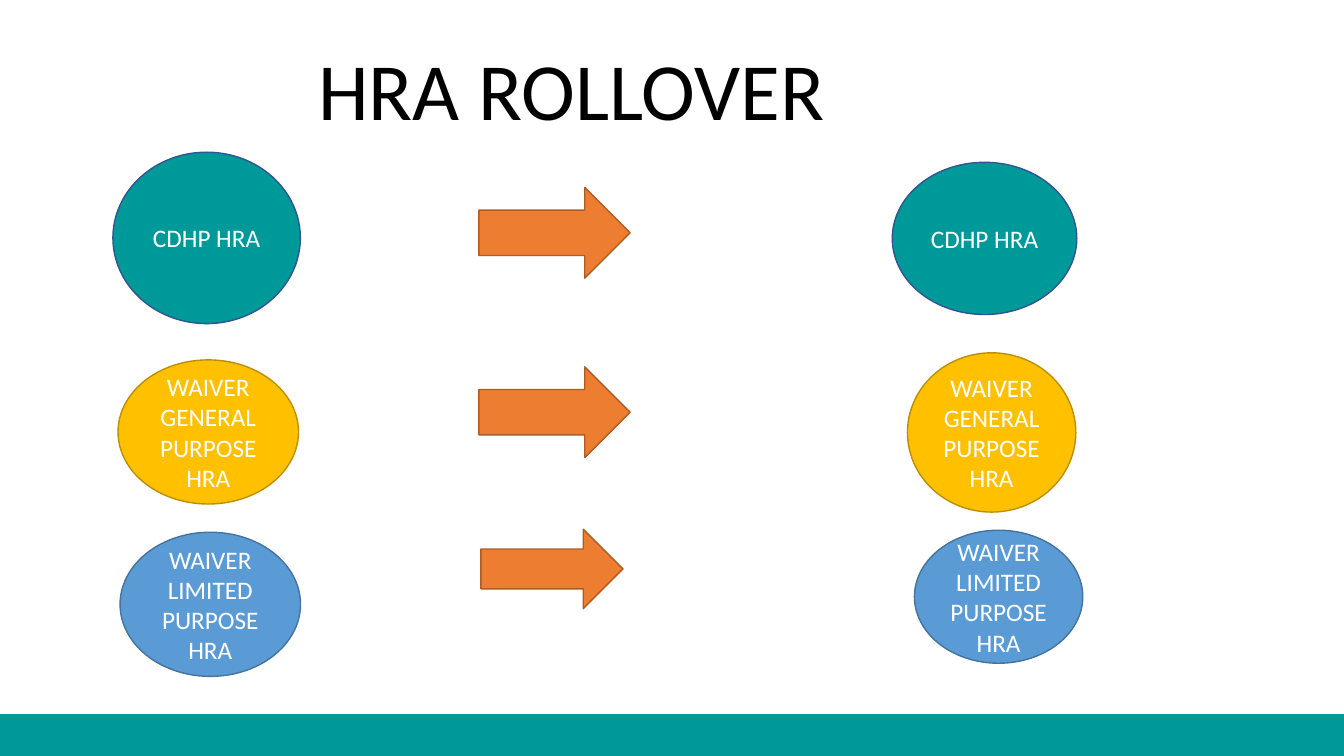
from pptx import Presentation
from pptx.dml.color import RGBColor as RGB
from pptx.enum.shapes import MSO_SHAPE as SHAPE
from pptx.enum.text import MSO_ANCHOR as ANCHOR, PP_ALIGN as ALIGN
from pptx.oxml import parse_xml
from pptx.oxml.ns import nsdecls
from pptx.util import Inches, Pt

THEME = {
    "font": "Calibri", "title": 58, "label": 18, "edge": 1,
    "black": "000000", "white": "FFFFFF", "band": "009999",
    "teal": ("009999", "325491"),
    "gold": ("FFC000", "BD8E00"),
    "blue": ("5B9BD5", "43739E"),
    "arrow": ("ED7D31", "AF5C24"),
}

deck = Presentation()
deck.slide_width, deck.slide_height = Inches(13.33), Inches(7.5)
slide = deck.slides.add_slide(deck.slide_layouts[6])


def place(x, y, w, h):
    """Turn percentages of the slide into a box."""
    wide, high = deck.slide_width / 100, deck.slide_height / 100
    return [round(n) for n in (x * wide, y * high, w * wide, h * high)]


def write(frame, text, size, color):
    """Put one centred run into a frame."""
    frame.word_wrap = True
    para = frame.paragraphs[0]
    para.alignment = ALIGN.CENTER
    run = para.add_run()
    run.text = text
    run.font.name = THEME["font"]
    run.font.size = Pt(THEME[size])
    run.font.color.rgb = RGB.from_string(THEME[color])


# Title
title = slide.shapes.add_textbox(*place(0.75, 4.53, 83.5, 14.4))
write(title.text_frame, "HRA ROLLOVER", "title", "black")

# Footer band: a one-cell table with borders in its own colour
band = slide.shapes.add_table(1, 1, *place(0, 94.53, 100, 5.33)).table
cell = band.cell(0, 0)
for side in ("lnL", "lnR", "lnT", "lnB"):
    cell._tc.get_or_add_tcPr().append(parse_xml(
        f'<a:{side} {nsdecls("a")} w="{Pt(THEME["edge"])}"><a:solidFill>'
        f'<a:srgbClr val="{THEME["band"]}"/></a:solidFill></a:{side}>'))
cell.fill.solid()
cell.fill.fore_color.rgb = RGB.from_string(THEME["band"])

# Each row: label, colour, then the boxes of source, arrow and target
rows = [
    ("CDHP HRA", "teal", (8.4, 20.13, 13.95, 22.67),
     (35.63, 24.8, 11.25, 12), (66.39, 21.47, 13.73, 20.13)),
    ("WAIVER GENERAL PURPOSE HRA", "gold", (8.78, 47.6, 13.43, 19.07),
     (35.63, 48.53, 11.25, 12), (67.52, 46.67, 12.53, 21.07)),
    ("WAIVER LIMITED PURPOSE HRA", "blue", (8.93, 70.4, 13.43, 19.07),
     (35.78, 70, 10.58, 10.53), (68.04, 70.13, 12.53, 17.6)),
]
for label, tone, start, middle, end in rows:
    for kind, box, hue in ((SHAPE.OVAL, start, tone),
                           (SHAPE.RIGHT_ARROW, middle, "arrow"),
                           (SHAPE.OVAL, end, tone)):
        shape = slide.shapes.add_shape(kind, *place(*box))
        shape.shadow.inherit = False
        fill, line = THEME[hue]
        shape.fill.solid()
        shape.fill.fore_color.rgb = RGB.from_string(fill)
        shape.line.color.rgb = RGB.from_string(line)
        shape.line.width = Pt(THEME["edge"])
        if kind == SHAPE.OVAL:
            shape.text_frame.vertical_anchor = ANCHOR.MIDDLE
            write(shape.text_frame, label, "label", "white")

deck.save("out.pptx")
